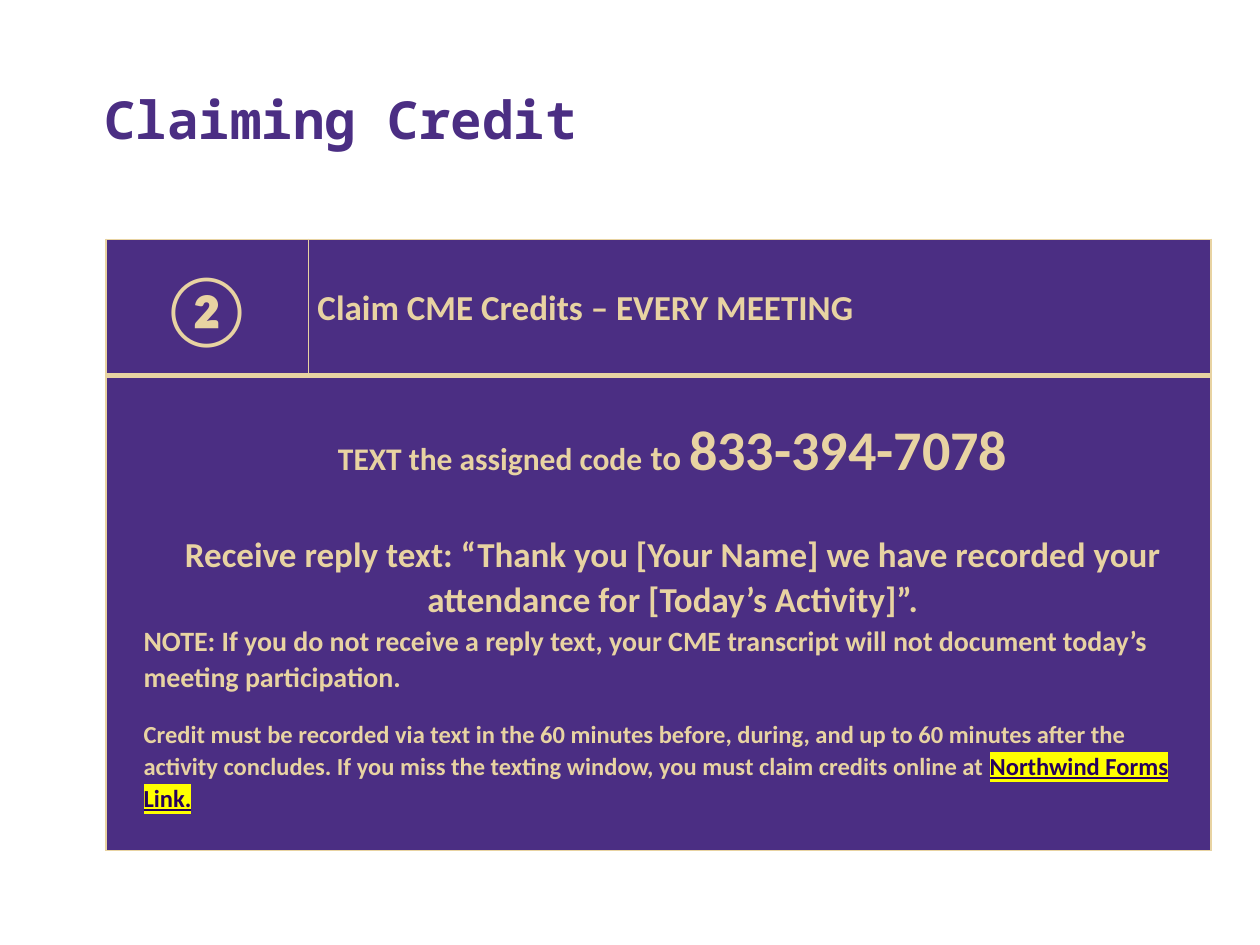
from dataclasses import dataclass

from lxml import etree
from pptx import Presentation
from pptx import util as u
from pptx.dml.color import RGBColor
from pptx.enum import text
from pptx.oxml.ns import qn

COLORS = {"purple": "4B2E83", "gold": "E8D3A2", "link": "26005C", "yellow": "FFFF00"}
LEFT, CENTER = text.PP_ALIGN.LEFT, text.PP_ALIGN.CENTER


@dataclass
class Run:
    text: str
    size: float
    color: str = "gold"
    font: str = "Calibri"
    underline: bool = False
    highlight: str = ""


@dataclass
class Para:
    runs: list[Run]
    align: text.PP_ALIGN = LEFT
    indent: float = 0
    before: float = 0
    after: float = 0
    spacing: float = 1.07


def add_color(parent, color: str) -> None:
    etree.SubElement(parent, qn("a:srgbClr"), val=COLORS[color])


def add_run(p, run: Run) -> None:
    r = p.add_run()
    r.text = run.text
    r.font.size = u.Pt(run.size)
    r.font.bold = True
    r.font.color.rgb = RGBColor.from_string(COLORS[run.color])
    r.font.name = run.font
    if run.underline:
        r.font.underline = True
    if run.highlight:
        highlight = etree.Element(qn("a:highlight"))
        add_color(highlight, run.highlight)
        r.font._element.insert(1, highlight)


def write(tf, paras: list[Para]) -> None:
    for i, para in enumerate(paras):
        p = tf.paragraphs[0] if i == 0 else tf.add_paragraph()
        p.alignment = para.align
        p.line_spacing = para.spacing
        p.space_before = u.Pt(para.before)
        p.space_after = u.Pt(para.after)
        if para.indent:
            p._p.get_or_add_pPr().set("marL", str(u.Inches(para.indent)))
        for run in para.runs:
            add_run(p, run)


def set_borders(cell, top: float, bottom: float) -> None:
    tc_pr = cell._tc.get_or_add_tcPr()
    widths = {"lnL": 1, "lnR": 1, "lnT": top, "lnB": bottom}
    for i, (side, width) in enumerate(widths.items()):
        ln = etree.Element(qn(f"a:{side}"), w=str(u.Pt(width)))
        add_color(etree.SubElement(ln, qn("a:solidFill")), "gold")
        tc_pr.insert(i, ln)


def fill_cell(cell, paras: list[Para], margin: float = 0.07,
              top: float = 1, bottom: float = 1) -> None:
    cell.margin_left = cell.margin_right = u.Inches(margin)
    cell.margin_top = cell.margin_bottom = 0
    cell.vertical_anchor = text.MSO_ANCHOR.MIDDLE
    cell.fill.solid()
    cell.fill.fore_color.rgb = RGBColor.from_string(COLORS["purple"])
    set_borders(cell, top, bottom)
    write(cell.text_frame, paras)


INSTRUCTIONS = [
    Para([Run("TEXT the assigned code", 18), Run(" to ", 20), Run("833-394-7078", 32)],
         CENTER, 0.23),
    Para([Run("Receive reply text: “Thank you [Your Name] we have recorded your "
              "attendance for [Today’s Activity]”.", 20)], CENTER, 0.23, before=26),
    Para([Run("NOTE: If you do not receive a reply text, your CME transcript will not "
              "document today’s meeting participation.", 16)], indent=0.23),
    Para([Run("Credit must be recorded via text in the 60 minutes before, during, and up "
              "to 60 minutes after the activity concludes. If you miss the texting "
              "window, you must claim credits online at ", 14),
          Run("Northwind Forms Link.", 14, "link", underline=True, highlight="yellow")],
         indent=0.23, before=13, after=6),
]


def main() -> None:
    prs = Presentation()
    prs.slide_width, prs.slide_height = u.Inches(10), u.Inches(7.5)
    s = prs.slides.add_slide(prs.slide_layouts[6])

    # Title
    title = s.shapes.add_textbox(u.Inches(0.73), u.Inches(0.16), u.Inches(8.88), u.Inches(1.08))
    tf = title.text_frame
    tf.word_wrap = True
    tf.vertical_anchor = text.MSO_ANCHOR.BOTTOM
    write(tf, [Para([Run("Claiming Credit", 30, "purple", "Noto Sans Mono")], spacing=1)])

    # Step table: number and heading above the instructions
    table = s.shapes.add_table(2, 2, u.Inches(0.84), u.Inches(1.9),
                               u.Inches(8.77), u.Inches(4.85)).table
    table.first_row = table.horz_banding = False
    for column, width in zip(table.columns, (1.61, 7.16)):
        column.width = u.Inches(width)
    for row, height in zip(table.rows, (1.08, 3.77)):
        row.height = u.Inches(height)
    table.cell(1, 0).merge(table.cell(1, 1))

    fill_cell(table.cell(0, 0), [Para([Run("②", 40)], CENTER)], margin=0, bottom=3)
    fill_cell(table.cell(0, 1), [Para([Run("Claim CME Credits – EVERY MEETING", 20)])], bottom=3)
    fill_cell(table.cell(1, 0), INSTRUCTIONS, top=3)

    prs.save("out.pptx")


if __name__ == "__main__":
    main()
